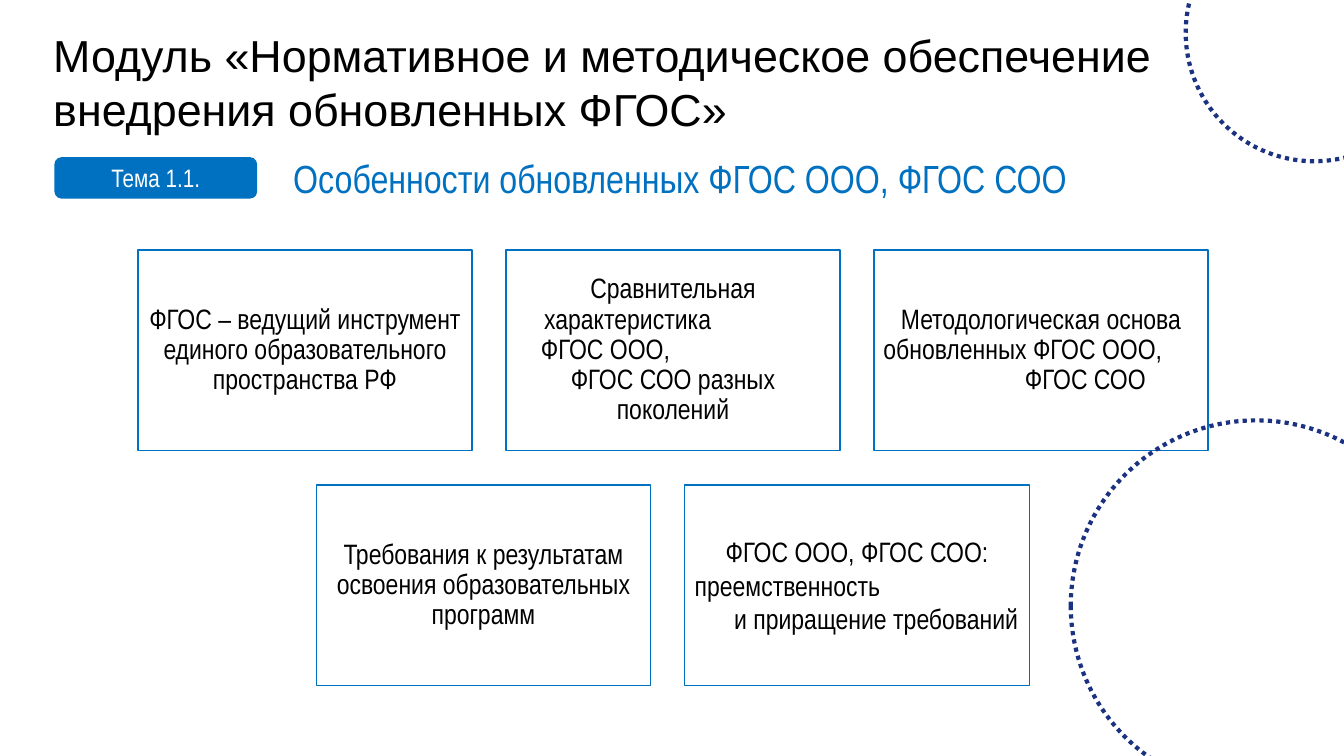
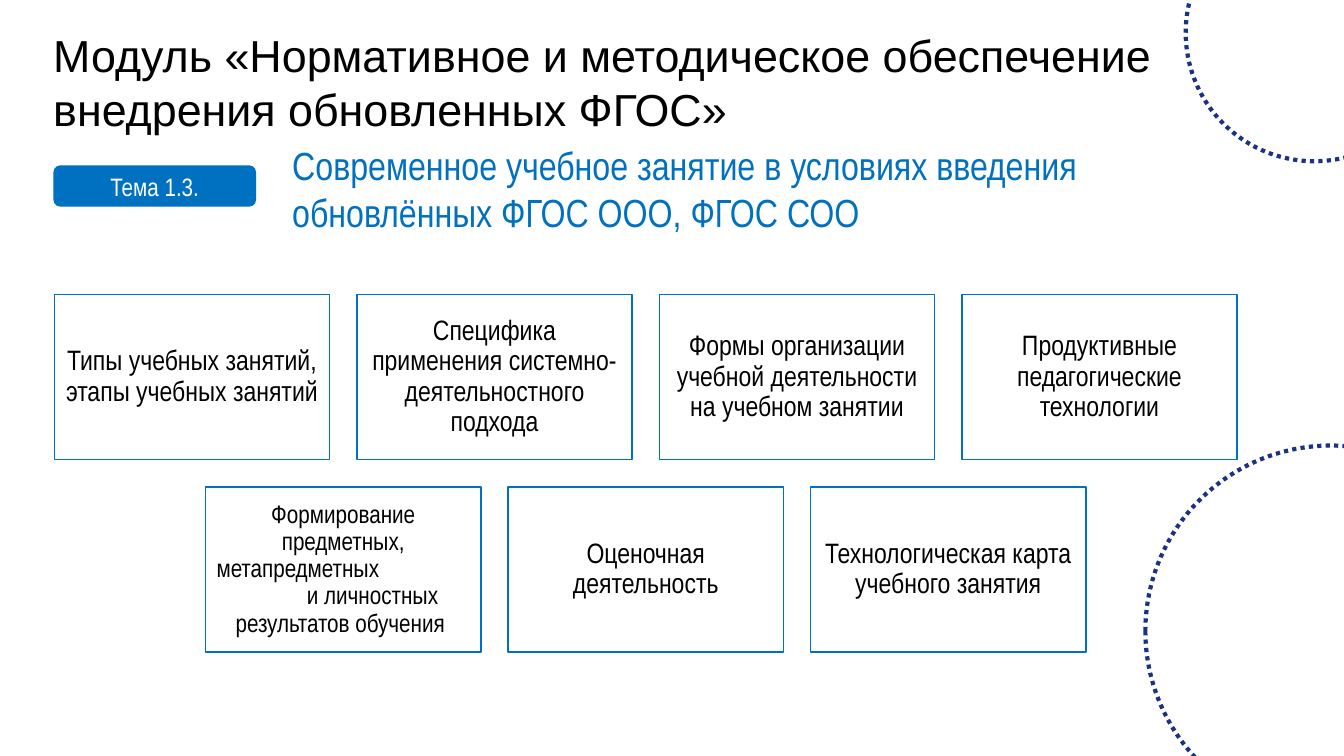
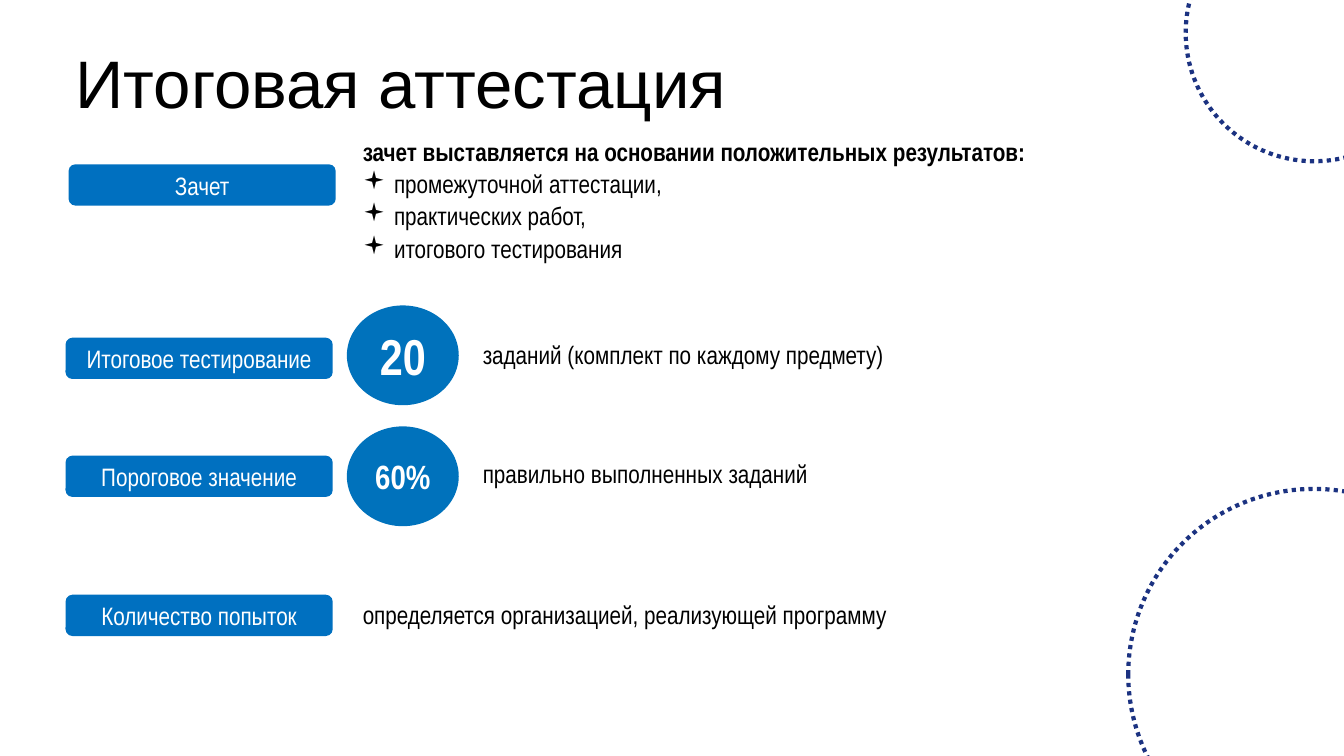
from lxml.etree import SubElement
from pptx import Presentation
from pptx.dml.color import RGBColor
from pptx.enum.dml import MSO_LINE
from pptx.enum.shapes import MSO_SHAPE
from pptx.enum.text import MSO_ANCHOR, PP_ALIGN
from pptx.oxml.ns import qn
from pptx.util import Pt

EMU_PER_PX = 9144  # 100 px to the inch
COLORS = {
    "white": "FFFFFF",
    "black": "000000",
    "blue": "0070C0",
    "circle": "0072BC",
    "navy": "1B3281",
}
HEADING_FONT = "Arial"
BODY_FONT = "Arial Narrow"
BULLET_FONT = "Wingdings"
BULLET_INDENT = 31
MODULE_TITLE = "Модуль «Нормативное и методическое обеспечение внедрения обновленных ФГОС»"
BADGE_HEIGHT = 41
RING_SIZE = 368


def px(length):
    return round(length * EMU_PER_PX)


def rgb(name):
    return RGBColor.from_string(COLORS[name])


def write(frame, text, font=BODY_FONT, size=18, color="black", bold=False,
          align=PP_ALIGN.LEFT, spacing=1.0, shift=0, bullet=None):
    """Add a paragraph; shift moves a centred line sideways by that many px."""
    para = frame.add_paragraph() if frame.text else frame.paragraphs[0]
    properties = para._p.get_or_add_pPr()
    indent = BULLET_INDENT if bullet else 0
    # Both margins are always set, so that none carries over from the line before.
    properties.set("marL", str(px(indent + max(2 * shift, 0))))
    properties.set("marR", str(px(max(-2 * shift, 0))))
    properties.set("indent", str(px(-indent)))
    if bullet:
        SubElement(properties, qn("a:buFont"), typeface=BULLET_FONT)
        SubElement(properties, qn("a:buChar"), char=bullet)
    para.alignment = align
    para.line_spacing = spacing
    span = para.add_run()
    span.text = text
    span.font.name = font
    span.font.size = Pt(size)
    span.font.bold = bold
    span.font.color.rgb = rgb(color)


def add_text_frame(page, box):
    frame = page.shapes.add_textbox(*map(px, box)).text_frame
    frame.word_wrap = True
    return frame


def add_figure(page, kind, box, fill=None, line=None, weight=1):
    figure = page.shapes.add_shape(kind, *map(px, box))
    figure.shadow.inherit = False
    if fill:
        figure.fill.solid()
        figure.fill.fore_color.rgb = rgb(fill)
    else:
        figure.fill.background()
    if line:
        figure.line.color.rgb = rgb(line)
        figure.line.width = Pt(weight)
    else:
        figure.line.fill.background()
    figure.text_frame.word_wrap = True
    figure.text_frame.vertical_anchor = MSO_ANCHOR.MIDDLE
    return figure


def add_ring(page, left, top, size):
    ring = add_figure(page, MSO_SHAPE.OVAL, (left, top, size, size), line="navy", weight=3)
    ring.line.dash_style = MSO_LINE.ROUND_DOT


def add_page(deck, title, box, size):
    """Start a slide with its title and the ring in the top corner."""
    page = deck.slides.add_slide(deck.slide_layouts[6])
    write(add_text_frame(page, box), title, font=HEADING_FONT, size=size)
    add_ring(page, 1176, -95, 255)
    return page


def add_badge(page, left, top, width, label):
    badge = add_figure(page, MSO_SHAPE.ROUNDED_RECTANGLE,
                       (left, top, width, BADGE_HEIGHT), fill="blue")
    write(badge.text_frame, label, color="white", align=PP_ALIGN.CENTER)


def add_card(page, box, lines, opacity, size=20, spacing=0.9):
    """Draw a framed card; each line is a text or a (text, shift) pair."""
    card = add_figure(page, MSO_SHAPE.RECTANGLE, box, fill="white", line="blue")
    fill_color = card._element.spPr.find(qn("a:solidFill")).find(qn("a:srgbClr"))
    SubElement(fill_color, qn("a:alpha"), val=str(opacity * 1000))
    frame = card.text_frame
    frame.margin_left = frame.margin_right = px(8)
    frame.margin_top = frame.margin_bottom = px(8)
    for line in lines:
        text, shift = (line, 0) if isinstance(line, str) else line
        write(frame, text, size=size, align=PP_ALIGN.CENTER, spacing=spacing, shift=shift)


def add_card_rows(page, box, rows, card_width, gap):
    """Centre rows of cards in the box, fading their fill from 90 to 50 percent."""
    left, top, width, height = box
    card_height = (height - gap * (len(rows) - 1)) // len(rows)
    last = sum(map(len, rows)) - 1
    number = 0
    for row_number, row in enumerate(rows):
        widths = [card.get("width", card_width) for card in row]
        card_left = left + (width - sum(widths) - gap * (len(row) - 1)) // 2
        card_top = top + row_number * (card_height + gap)
        for card, own_width in zip(row, widths):
            add_card(page, (card_left, card_top, own_width, card_height), card["lines"],
                     round(90 - 40 * number / last), **card.get("style", {}))
            card_left += own_width + gap
            number += 1


def build_topic(deck, badge, topic, badge_at, topic_at, cards_box, rows,
                card_width, gap, ring_at):
    page = add_page(deck, MODULE_TITLE, (43, 23, 1277, 118), 32)
    write(add_text_frame(page, (*topic_at, 948, 57)), topic, size=28, color="blue")
    add_badge(page, *badge_at, 201, badge)
    add_card_rows(page, cards_box, rows, card_width, gap)
    add_ring(page, *ring_at, RING_SIZE)


def add_assessment_row(page, badge_at, label, text_at, text, circle=None):
    """Place a badge, an optional circled (top, value, size) and an explanation."""
    add_badge(page, *badge_at, 265, label)
    if circle:
        top, value, size = circle
        disc = add_figure(page, MSO_SHAPE.OVAL, (344, top, 111, 99), fill="circle")
        write(disc.text_frame, value, size=size, color="white", bold=True,
              align=PP_ALIGN.CENTER)
    write(add_text_frame(page, (*text_at, 834, 43)), text,
          align=PP_ALIGN.JUSTIFY, spacing=1.07)


def build_assessment(deck):
    page = add_page(deck, "Итоговая аттестация", (65, 36, 892, 91), 48)
    add_ring(page, 1119, 485, RING_SIZE)
    add_badge(page, 68, 163, 265, "Зачет")
    frame = add_text_frame(page, (350, 128, 923, 172))
    write(frame, "зачет выставляется на основании положительных результатов:",
          bold=True, align=PP_ALIGN.JUSTIFY, spacing=1.07)
    for item in ("промежуточной аттестации,", "практических работ,", "итогового тестирования"):
        write(frame, item, align=PP_ALIGN.JUSTIFY, spacing=1.07, bullet="▪")
    add_assessment_row(page, (65, 335), "Итоговое тестирование", (469, 330),
                       "заданий (комплект по каждому предмету)", (303, "20", 36))
    add_assessment_row(page, (65, 452), "Пороговое значение", (469, 448),
                       "правильно выполненных заданий", (423, "60%", 24))
    add_assessment_row(page, (65, 590), "Количество попыток", (350, 588),
                       "определяется организацией, реализующей программу")


STANDARDS_CARDS = [
    [
        {"lines": ["ФГОС – ведущий инструмент единого образовательного пространства РФ"]},
        {"lines": ["Сравнительная", ("характеристика", -45), ("ФГОС ООО,", -67),
                   "ФГОС СОО разных", "поколений"]},
        {"lines": ["Методологическая основа", ("обновленных ФГОС ООО,", -18),
                   ("ФГОС СОО", 44)]},
    ],
    [
        {"lines": ["Требования к результатам освоения образовательных программ"]},
        {"lines": ["ФГОС ООО, ФГОС СОО:", ("преемственность", -69),
                   ("и приращение требований", 19)],
         "width": 342, "style": {"spacing": 1.0}},
    ],
]
LESSON_CARDS = [
    [
        {"lines": ["Типы учебных занятий, этапы учебных занятий"]},
        {"lines": ["Специфика применения системно-деятельностного подхода"]},
        {"lines": ["Формы организации учебной деятельности на учебном занятии"]},
        {"lines": ["Продуктивные педагогические технологии"]},
    ],
    [
        {"lines": ["Формирование", "предметных,", ("метапредметных", -45),
                   ("и личностных", 29), ("результатов обучения", -3)],
         "style": {"size": 18}},
        {"lines": ["Оценочная деятельность"]},
        {"lines": ["Технологическая карта учебного занятия"]},
    ],
]


def main():
    deck = Presentation()
    deck.slide_width, deck.slide_height = px(1333), px(750)
    build_topic(deck, "Тема 1.1.", "Особенности обновленных ФГОС ООО, ФГОС СОО",
                badge_at=(54, 156), topic_at=(281, 148),
                cards_box=(137, 248, 1061, 432), rows=STANDARDS_CARDS,
                card_width=331, gap=34, ring_at=(1062, 417))
    build_topic(deck, "Тема 1.3.",
                "Современное учебное занятие в условиях введения обновлённых ФГОС ООО, ФГОС СОО",
                badge_at=(53, 164), topic_at=(280, 135),
                cards_box=(54, 292, 1173, 355), rows=LESSON_CARDS,
                card_width=273, gap=27, ring_at=(1136, 442))
    build_assessment(deck)
    deck.save("out.pptx")


if __name__ == "__main__":
    main()
